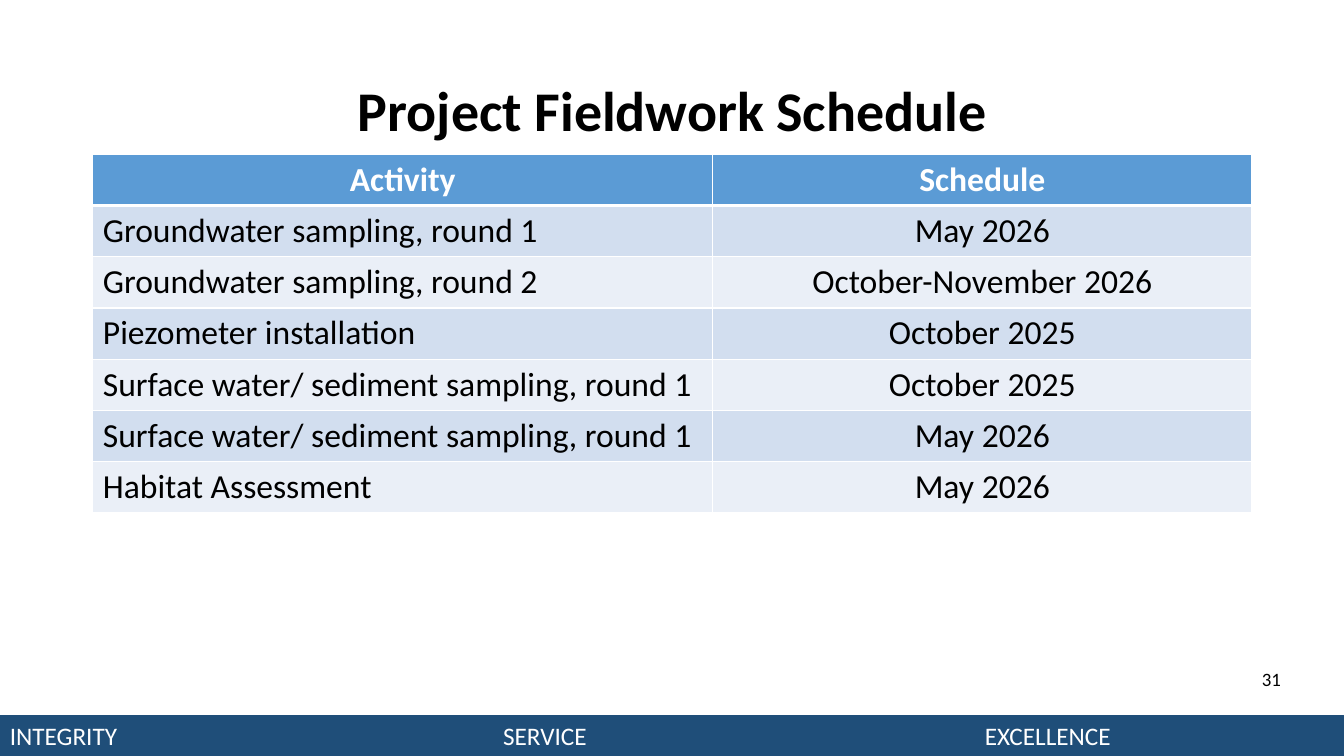
from pptx import Presentation
from pptx import util as u
from pptx.dml import color
from pptx.enum import shapes, text
from pptx.oxml import ns
from lxml import etree


def paint(fill, hex_code):
    fill.solid()
    fill.fore_color.rgb = color.RGBColor.from_string(hex_code)


def style(para, size, hex_code, bold=False, align=text.PP_ALIGN.LEFT):
    para.alignment = align
    for span in para.runs:
        span.font.name = "Calibri"
        span.font.size = u.Pt(size)
        span.font.bold = bold
        paint(span.font.fill, hex_code)


CENTER = text.PP_ALIGN.CENTER
deck = Presentation()
deck.slide_width, deck.slide_height = u.Cm(33.87), u.Cm(19.05)
page = deck.slides.add_slide(deck.slide_layouts[6])

footer = page.shapes.add_shape(
    shapes.MSO_SHAPE.RECTANGLE, u.Cm(0), u.Cm(18.03), deck.slide_width, u.Cm(1.02))
footer.shadow.inherit = False
paint(footer.fill, "1F4E79")
paint(footer.line.fill, "1F4E79")
footer.line.width = u.Pt(0.75)
footer.text_frame.vertical_anchor = text.MSO_ANCHOR.MIDDLE
para = footer.text_frame.paragraphs[0]
para.text = "\t".join(["INTEGRITY", "SERVICE", "EXCELLENCE"])
tabs = etree.SubElement(para._p.get_or_add_pPr(), ns.qn("a:tabLst"))
for stop in (12.43, 24.57):
    etree.SubElement(tabs, ns.qn("a:tab"), pos=str(u.Cm(stop)), algn="l")
style(para, 18, "FFFFFF")

title = page.shapes.add_textbox(u.Cm(2.34), u.Cm(1.02), u.Cm(29.21), u.Cm(3.68))
title.text_frame.word_wrap = True
title.text_frame.vertical_anchor = text.MSO_ANCHOR.MIDDLE
para = title.text_frame.paragraphs[0]
para.text = "Project Fieldwork Schedule"
para.line_spacing = 0.9
style(para, 40, "000000", bold=True, align=CENTER)

number = page.shapes.add_textbox(u.Cm(31.55), u.Cm(16.69), u.Cm(1.32), u.Cm(1.32))
number.text_frame.word_wrap = True
para = number.text_frame.paragraphs[0]
para.text = "31"
style(para, 13.5, "000000")

schedule = [
    ("Activity", "Schedule"),
    ("Groundwater sampling, round 1", "May 2026"),
    ("Groundwater sampling, round 2", "October-November 2026"),
    ("Piezometer installation", "October 2025"),
    ("Surface water/ sediment sampling, round 1", "October 2025"),
    ("Surface water/ sediment sampling, round 1", "May 2026"),
    ("Habitat Assessment", "May 2026"),
]
row_height = 1.29
table = page.shapes.add_table(
    len(schedule), 2, u.Cm(2.34), u.Cm(3.89),
    u.Cm(29.21), u.Cm(row_height * len(schedule))).table
table.columns[0].width, table.columns[1].width = u.Cm(15.62), u.Cm(13.59)

for row, entries in enumerate(schedule):
    table.rows[row].height = u.Cm(row_height)
    header = row == 0
    shade = "5B9BD5" if header else ("EAEFF7", "D2DEEF")[row % 2]
    for column, entry in enumerate(entries):
        cell = table.cell(row, column)
        for side in ("L", "R", "T", "B"):
            thick = (header and side == "B") or (row == 1 and side == "T")
            border = etree.SubElement(
                cell._tc.get_or_add_tcPr(), ns.qn("a:ln" + side),
                w=str(u.Pt(3 if thick else 1)))
            solid = etree.SubElement(border, ns.qn("a:solidFill"))
            etree.SubElement(solid, ns.qn("a:srgbClr"), val="FFFFFF")
        paint(cell.fill, shade)
        para = cell.text_frame.paragraphs[0]
        para.text = entry
        style(para, 24, "FFFFFF" if header else "000000", bold=header,
              align=CENTER if header or column == 1 else text.PP_ALIGN.LEFT)

deck.save("out.pptx")
